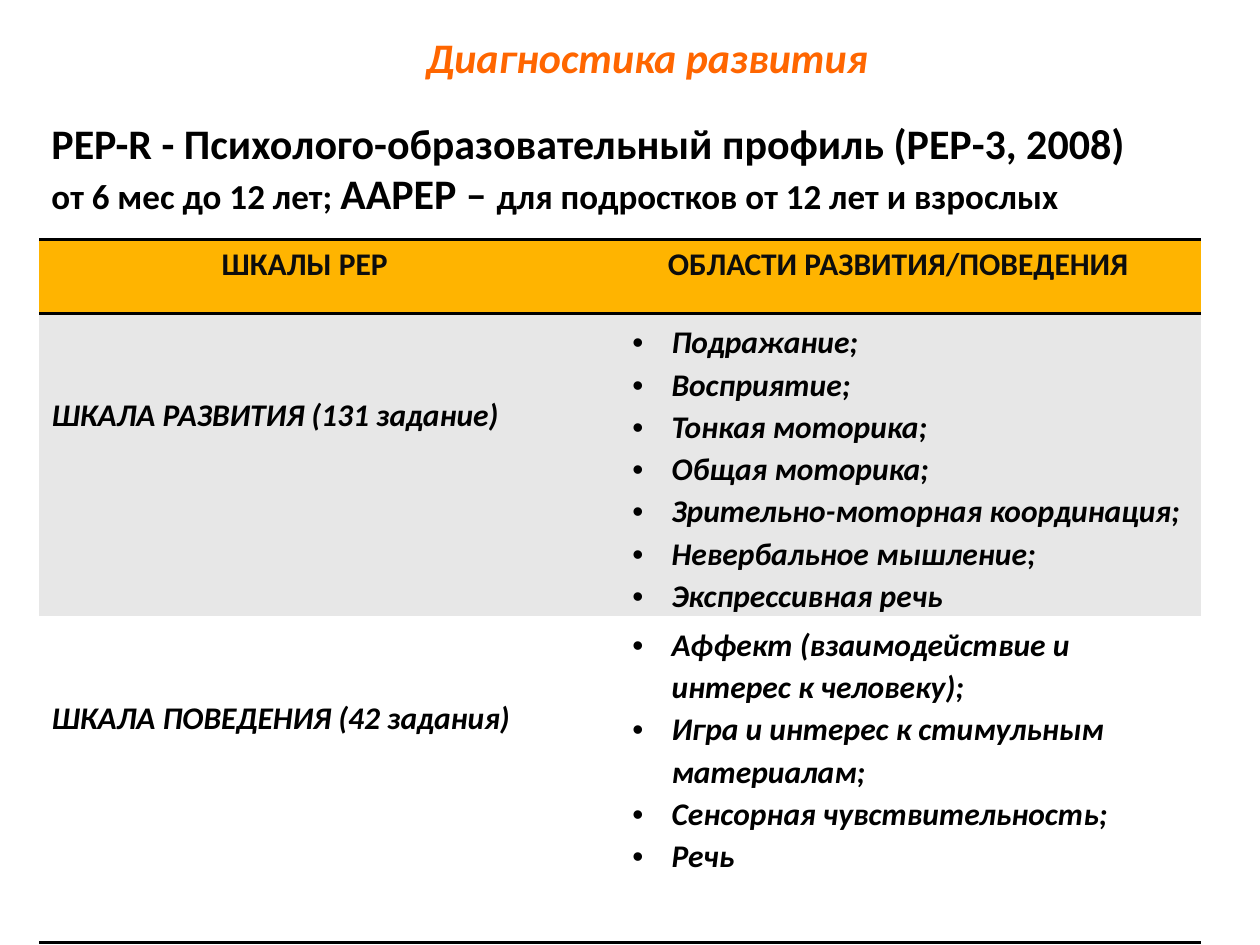
from dataclasses import dataclass

from lxml.etree import SubElement
from pptx import Presentation
from pptx.dml.color import RGBColor as RGB
from pptx.enum.text import MSO_ANCHOR as Anchor, MSO_AUTO_SIZE as AutoSize, PP_ALIGN as Align
from pptx.oxml.ns import qn
from pptx.util import Inches, Pt


@dataclass(frozen=True)
class Theme:
    font: str = "Calibri"
    accent: str = "FF6600"
    ink: str = "000000"
    header_ink: str = "0D0D0D"
    header_fill: str = "FFB400"
    band_fill: str = "E7E7E7"
    plain_fill: str = "FFFFFF"
    title: int = 24
    detail: int = 20
    body: int = 18
    rule: int = 2


THEME = Theme()

# Content
HEADING = "Диагностика развития"
INTRO = [
    [("PEP-R - Психолого-образовательный профиль (РЕР-3, 2008)", THEME.title)],
    [("от 6 мес до 12 лет; ", THEME.detail),
     ("ААРЕР – ", THEME.title),
     ("для подростков от 12 лет и взрослых", THEME.detail)],
]
HEADERS = [("ШКАЛЫ РЕР", 1.35), ("ОБЛАСТИ РАЗВИТИЯ/ПОВЕДЕНИЯ", 0.28)]  # text, indent
SCALES = [
    ("ШКАЛА РАЗВИТИЯ (131 задание)",
     ["Подражание;", "Восприятие;", "Тонкая моторика;", "Общая моторика;",
      "Зрительно-моторная координация;", "Невербальное мышление;",
      "Экспрессивная речь"]),
    ("ШКАЛА ПОВЕДЕНИЯ (42 задания)",
     ["Аффект (взаимодействие и интерес к человеку);",
      "Игра и интерес к стимульным материалам;",
      "Сенсорная чувствительность;", "Речь"]),
]

# Layout, in inches
LEFT = 0.31
COLUMN_WIDTH = 4.61
ROW_HEIGHTS = [0.59, 2.4, 2.59]
TABLE_TOP = 1.9
LABEL_DROP = 0.66
BULLET_INDENT = 0.31


def add_run(paragraph, text, size, color=THEME.ink, italic=False):
    run = paragraph.add_run()
    run.text = text
    font = run.font
    font.name, font.size, font.bold, font.italic = THEME.font, Pt(size), True, italic
    font.color.rgb = RGB.from_string(color)


def next_paragraph(frame, index):
    return frame.paragraphs[0] if index == 0 else frame.add_paragraph()


def set_indent(paragraph, margin, first_line):
    properties = paragraph._p.get_or_add_pPr()
    properties.set("marL", str(Inches(margin)))
    properties.set("indent", str(Inches(first_line)))
    return properties


def style_cell(cell, fill, ruled_sides):
    # Borders come before the fill in the cell properties
    properties = cell._tc.get_or_add_tcPr()
    for side in "LRTB":
        ruled = side in ruled_sides
        line = SubElement(properties, qn(f"a:ln{side}"), w=str(Pt(THEME.rule) if ruled else 0))
        if ruled:
            SubElement(SubElement(line, qn("a:solidFill")), qn("a:srgbClr"), val=THEME.ink)
        else:
            SubElement(line, qn("a:noFill"))
    cell.fill.solid()
    cell.fill.fore_color.rgb = RGB.from_string(fill)
    cell.margin_bottom = 0


def add_heading(slide):
    title = slide.shapes.title
    title.left, title.top, title.width, title.height = map(Inches, (0.34, 0.2, 9.59, 0.5))
    frame = title.text_frame
    frame.auto_size, frame.vertical_anchor = AutoSize.NONE, Anchor.TOP
    frame.paragraphs[0].alignment = Align.CENTER
    add_run(frame.paragraphs[0], HEADING, THEME.title, THEME.accent, italic=True)


def add_intro(slide):
    frame = slide.shapes.add_textbox(*map(Inches, (LEFT, 0.88, 9.69, 1))).text_frame
    frame.word_wrap = True
    for index, parts in enumerate(INTRO):
        paragraph = next_paragraph(frame, index)
        for text, size in parts:
            add_run(paragraph, text, size)


def add_scales(slide):
    table = slide.shapes.add_table(
        len(ROW_HEIGHTS), len(HEADERS), Inches(LEFT), Inches(TABLE_TOP),
        Inches(COLUMN_WIDTH * len(HEADERS)), Inches(sum(ROW_HEIGHTS))).table
    for column in table.columns:
        column.width = Inches(COLUMN_WIDTH)
    for row, height in zip(table.rows, ROW_HEIGHTS):
        row.height = Inches(height)

    # Header row
    for column, (text, indent) in enumerate(HEADERS):
        cell = table.cell(0, column)
        style_cell(cell, THEME.header_fill, "TB")
        paragraph = cell.text_frame.paragraphs[0]
        set_indent(paragraph, indent, 0)
        add_run(paragraph, text, THEME.body, THEME.header_ink)

    # One row per scale: label and bulleted areas
    looks = [(THEME.band_fill, "T"), (THEME.plain_fill, "B")]
    for row, ((label, areas), look) in enumerate(zip(SCALES, looks), start=1):
        label_cell, areas_cell = table.cell(row, 0), table.cell(row, 1)
        style_cell(label_cell, *look)
        style_cell(areas_cell, *look)
        label_cell.margin_top = Inches(LABEL_DROP)
        add_run(label_cell.text_frame.paragraphs[0], label, THEME.body, italic=True)
        for index, area in enumerate(areas):
            paragraph = next_paragraph(areas_cell.text_frame, index)
            paragraph.line_spacing = 1.1
            properties = set_indent(paragraph, BULLET_INDENT, -BULLET_INDENT)
            SubElement(properties, qn("a:buFont"), typeface="Arial")
            SubElement(properties, qn("a:buChar"), char="•")
            add_run(paragraph, area, THEME.body, italic=True)


def main():
    deck = Presentation()
    deck.slide_width, deck.slide_height = Inches(10), Inches(7.5)
    slide = deck.slides.add_slide(deck.slide_layouts[5])
    add_heading(slide)
    add_intro(slide)
    add_scales(slide)
    deck.save("out.pptx")


if __name__ == "__main__":
    main()
